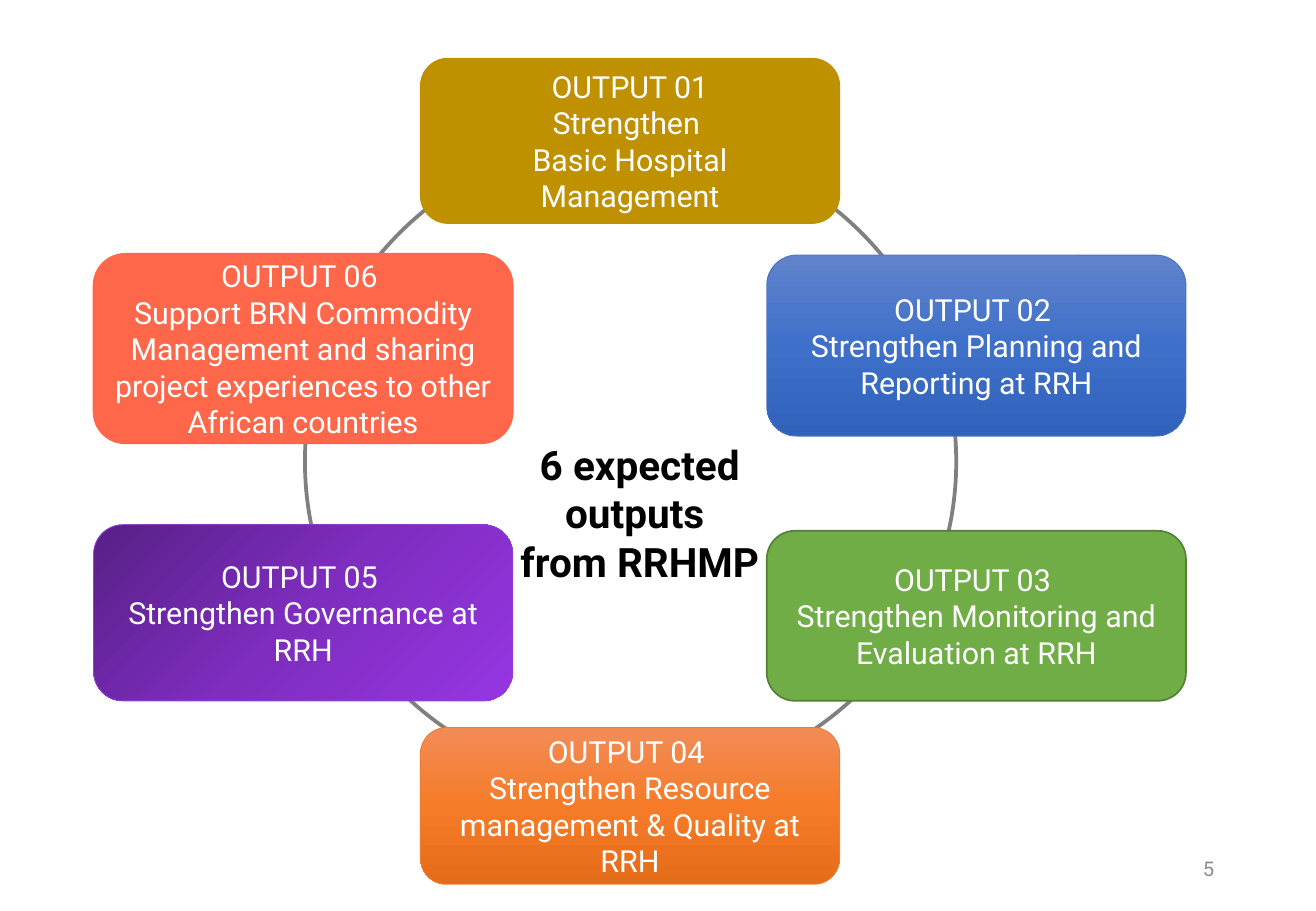
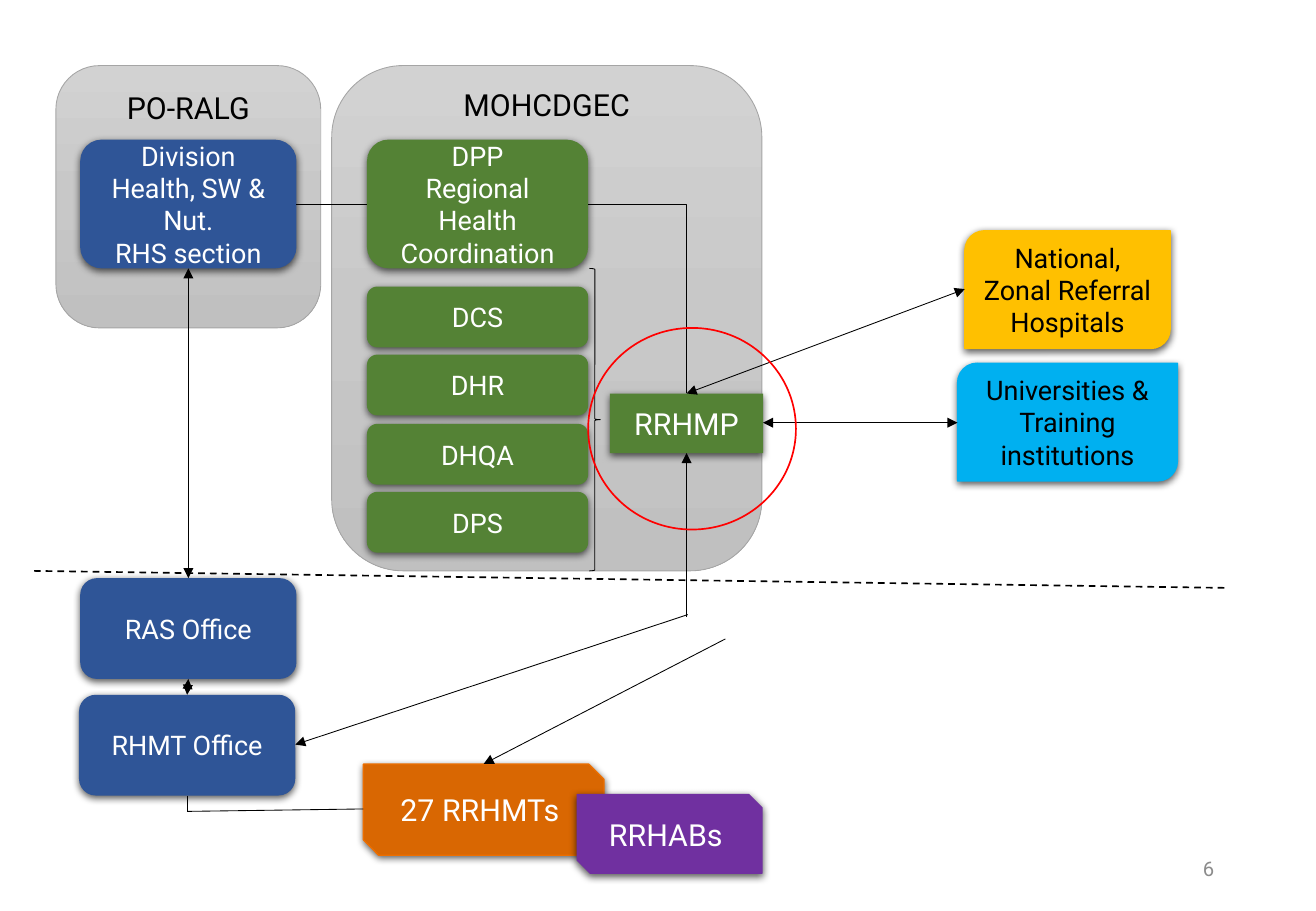
from copy import deepcopy
from lxml.etree import SubElement
from pptx import Presentation
from pptx.dml.color import RGBColor
from pptx.enum.dml import MSO_LINE
from pptx.enum.shapes import MSO_CONNECTOR, MSO_SHAPE
from pptx.enum.text import MSO_ANCHOR, PP_ALIGN
from pptx.oxml.ns import qn
from pptx.util import Pt

PX = 9144
FONT = "Roboto"
WHITE, BLACK, GREY = "FFFFFF", "000000", "8C8C8C"
NAVY, GREEN = "2F5597", "548235"
STEEL = (90, "D2D2D2", "C8C8C8", "C0C0C0")
ROUND, RECT = MSO_SHAPE.ROUNDED_RECTANGLE, MSO_SHAPE.RECTANGLE
SNIP, LEAF = MSO_SHAPE.SNIP_2_DIAG_RECTANGLE, MSO_SHAPE.ROUND_2_DIAG_RECTANGLE
OVAL, BRACE = MSO_SHAPE.OVAL, MSO_SHAPE.RIGHT_BRACE

LEFT, MID, RIGHT, WIDE = 77, 346, 631, 345
OUTPUTS = [
    (MID, 48, 136, "BF9000", ("BF9000", 0.5),
     ["OUTPUT 01", "Strengthen ", "Basic Hospital Management"]),
    (MID, 599, 129, (90, "F18C57", "F67B28", "E56C19"), ("ED7D31", 0.5),
     ["OUTPUT 04 ", "Strengthen Resource management & Quality at RRH"]),
    (LEFT, 209, 156, "FF674A", ("FF674A", 1),
     ["OUTPUT 06 ", "Support BRN Commodity Management and sharing "
      "project experiences to other African countries"]),
    (RIGHT, 210, 149, (90, "6183CB", "3E70CA", "3062BB"), ("4472C4", 0.5),
     ["OUTPUT 02 ", "Strengthen Planning and Reporting at RRH"]),
    (LEFT, 432, 145, (45, "582086", "7E2DBF", "9536E2"), ("9441D7", 0.5),
     ["OUTPUT 05 ", "Strengthen Governance at RRH"]),
    (RIGHT, 437, 140, "70AD47", ("538035", 1),
     ["OUTPUT 03 ", "Strengthen Monitoring and Evaluation at RRH"]),
]

PANELS = [
    ((46, 54, 218, 216), "PO-RALG", 9),
    ((273, 54, 354, 416), "MOHCDGEC", 0),
]
UNITS = [
    (ROUND, (66, 115, 178, 106), NAVY, None,
     ["Division Health, SW & Nut.", "RHS section"], 16, WHITE),
    (ROUND, (302, 115, 182, 106), GREEN, None,
     ["DPP", "Regional Health Coordination"], 16, WHITE),
    (RECT, (502, 324, 126, 49), GREEN, None, ["RRHMP"], 18, WHITE),
    (SNIP, (299, 629, 198, 75), "D96702", ("ED6F00", 0.75),
     ["27 RRHMTs "], 18, WHITE),
    (LEAF, (794, 190, 169, 97), "FFC000", ("FFC000", 0.75),
     ["National, Zonal Referral Hospitals"], 16, BLACK),
    (LEAF, (788, 299, 181, 97), "00B0F0", ("00B0F0", 0.75),
     ["Universities &", "Training institutions"], 16, BLACK),
    (SNIP, (475, 654, 152, 65), "7030A0", ("7030A0", 0.75),
     ["RRHABs "], 18, WHITE),
    (ROUND, (66, 476, 178, 83), NAVY, None, ["RAS Office"], 16, WHITE),
    (ROUND, (65, 572, 178, 83), NAVY, None, ["RHMT Office"], 16, WHITE),
]
DEPTS = ["DCS", "DHR", "DHQA", "DPS"]
FIRST, LAST = 236, 405

BOTH, TAIL = ("headEnd", "tailEnd"), ("tailEnd",)
LINKS = [
    ((302, 168, 244, 168), ()),
    ((565, 324, 794, 238), BOTH),
    ((628, 348, 788, 348), BOTH),
    ((155, 221, 155, 476), BOTH),
    ((155, 559, 154, 572), BOTH),
    ((565, 508, 565, 373), TAIL),
    ((566, 506, 243, 613), TAIL),
    ((597, 526, 398, 629), TAIL),
    ((154, 655, 154, 668), ()),
    ((154, 668, 299, 666), ()),
]


def hue(code):
    return RGBColor.from_string(code)


def emu(nums):
    return [n * PX for n in nums]


def put(obj, **vals):
    for key, val in vals.items():
        setattr(obj, key, val)


def write(shape, paras, size, ink, bold=False, align=PP_ALIGN.CENTER, **frame):
    text = shape.text_frame
    put(text, word_wrap=True, **frame)
    for num, words in enumerate(paras):
        para = text.add_paragraph() if num else text.paragraphs[0]
        para.alignment = align
        run = para.add_run()
        run.text = words
        put(run.font, name=FONT, size=Pt(size), bold=bold)
        run.font.color.rgb = hue(ink)


def paint(shape, look):
    fill = shape.fill
    if look is None:
        fill.background()
    elif isinstance(look, str):
        fill.solid()
        fill.fore_color.rgb = hue(look)
    else:
        angle, *tones = look
        fill.gradient()
        fill.gradient_angle = 360 - angle
        stops = shape.element.spPr.find(qn("a:gradFill")).find(qn("a:gsLst"))
        stops.append(deepcopy(stops[0]))
        for num, (stop, tone) in enumerate(zip(fill.gradient_stops, tones)):
            stop.position = num / 2
            stop.color.rgb = hue(tone)


def edge(shape, pen):
    if pen is None:
        shape.line.fill.background()
    else:
        shape.line.color.rgb = hue(pen[0])
        shape.line.width = Pt(pen[1])


def form(slide, kind, area, look=None, pen=None, glow=False):
    shape = slide.shapes.add_shape(kind, *emu(area))
    paint(shape, look)
    edge(shape, pen)
    shape.shadow.inherit = False
    if glow:
        effects = shape.element.spPr.find(qn("a:effectLst"))
        shade = SubElement(effects, qn("a:outerShdw"), blurRad=str(Pt(4.5)),
                           dist=str(Pt(1.5)), dir="5400000", rotWithShape="0")
        tone = SubElement(shade, qn("a:srgbClr"), val=BLACK)
        SubElement(tone, qn("a:alpha"), val="63000")
    return shape


def join(slide, ends, tips=(), width=0.5, kind=MSO_CONNECTOR.STRAIGHT):
    link = slide.shapes.add_connector(kind, *emu(ends))
    edge(link, (BLACK, width))
    for tip in tips:
        SubElement(link.line._get_or_add_ln(), qn("a:" + tip), type="triangle")
    SubElement(link.element.spPr, qn("a:effectLst"))
    return link


def label(slide, area, paras, size, ink, **style):
    write(slide.shapes.add_textbox(*emu(area)), paras, size, ink, **style)


def page(deck, num):
    slide = deck.slides.add_slide(deck.slide_layouts[6])
    label(slide, (765, 695, 244, 40), [num], 12, GREY,
          align=PP_ALIGN.RIGHT, vertical_anchor=MSO_ANCHOR.MIDDLE)
    return slide


def ring(deck):
    slide = page(deck, "5")
    form(slide, OVAL, (251, 113, 536, 534), pen=("808080", 2.25))
    for left, top, high, look, pen, paras in OUTPUTS:
        card = form(slide, ROUND, (left, top, WIDE, high), look, pen)
        write(card, paras, 18, WHITE)
    label(slide, (376, 357, 301, 91), ["6 expected outputs ", "from RRHMP"],
          24, BLACK, bold=True)


def chart(deck):
    slide = page(deck, "6")
    for area, name, inset in PANELS:
        panel = form(slide, ROUND, area, STEEL, ("A5A5A5", 0.5))
        write(panel, [name], 18, BLACK, vertical_anchor=MSO_ANCHOR.TOP,
              margin_top=inset * PX)
    step = (LAST - FIRST) / (len(DEPTS) - 1)
    stack = [(ROUND, (302, round(FIRST + num * step), 182, 50), GREEN, None,
              [name], 16, WHITE) for num, name in enumerate(DEPTS)]
    for kind, area, look, pen, paras, size, ink in stack + UNITS:
        write(form(slide, kind, area, look, pen, True), paras, size, ink)
    form(slide, BRACE, (485, 221, 9, 249), pen=(BLACK, 0.5))
    for ends, tips in LINKS:
        join(slide, ends, tips)
    bend = join(slide, (484, 168, 565, 324), kind=MSO_CONNECTOR.ELBOW)
    bend.element.spPr.find(qn("a:prstGeom")).set("prst", "bentConnector2")
    border = join(slide, (28, 470, 1008, 484), width=1)
    border.line.dash_style = MSO_LINE.DASH
    form(slide, OVAL, (484, 270, 171, 166), pen=("FF0000", 1))


def main():
    deck = Presentation()
    put(deck, slide_width=1083 * PX, slide_height=750 * PX)
    ring(deck)
    chart(deck)
    deck.save("out.pptx")


if __name__ == "__main__":
    main()
